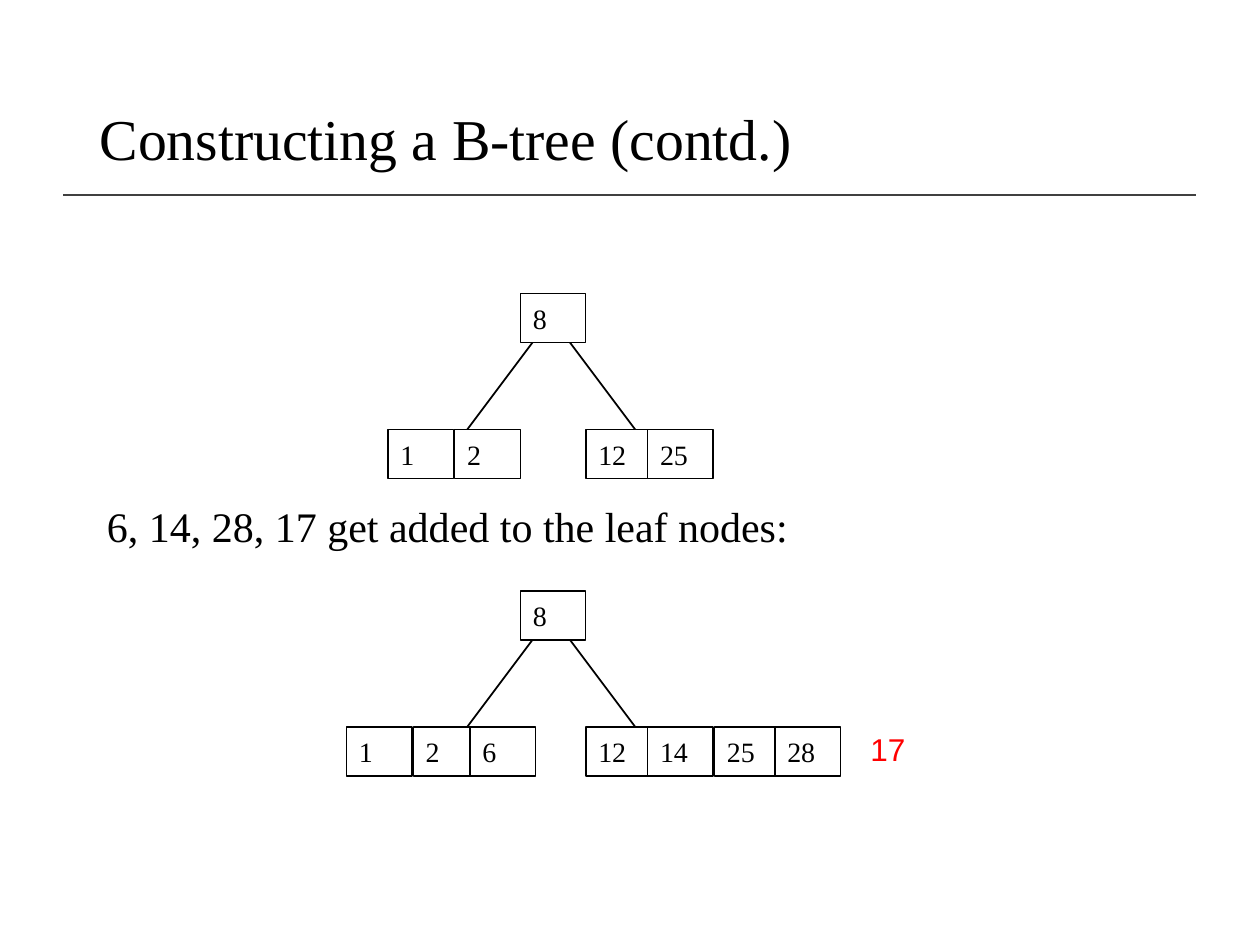
from lxml import etree
from pptx import Presentation
from pptx.dml.color import RGBColor
from pptx.enum.shapes import MSO_CONNECTOR, MSO_SHAPE
from pptx.enum.text import MSO_ANCHOR, PP_ALIGN
from pptx.oxml.ns import qn
from pptx.util import Inches, Pt

RECT, LINE = MSO_SHAPE.RECTANGLE, MSO_CONNECTOR.STRAIGHT
MIDDLE, LEFT = MSO_ANCHOR.MIDDLE, PP_ALIGN.LEFT
SERIF, SANS = "Times New Roman", "Arial"
BLACK, WHITE, GRAY, RED = "000000", "FFFFFF", "404040", "FF0000"

TITLE = "Constructing a B-tree (contd.)"
NOTE = "6, 14, 28, 17 get added to the leaf nodes:"
EXTRA = "17"
# Each tree: top of its root, then its leaf keys with their left edges
TREES = [
    (2.33, [("1", 3.08), ("2", 3.61), ("12", 4.65), ("25", 5.14)]),
    (4.69, [("1", 2.75), ("2", 3.28), ("6", 3.73),
            ("12", 4.65), ("14", 5.14), ("25", 5.67), ("28", 6.15)]),
]
ROOT, ROOT_X = "8", 4.13
CELL_W, CELL_H = 0.52, 0.39
DROP = 1.08                            # root top to leaf top
EDGES = [(4.33, 3.58), (4.42, 5.17)]   # x at root, x at leaf
EDGE_TOP, EDGE_H = 0.25, 1.0


def color(code):
    return RGBColor.from_string(code)


def write(shape, text, size=16, font=SERIF, ink=BLACK, space=None, wrap=True):
    frame = shape.text_frame
    frame.word_wrap = wrap
    frame.vertical_anchor = MIDDLE
    para = frame.paragraphs[0]
    para.alignment = LEFT
    para.line_spacing = space
    run = para.add_run()
    run.text = text
    run.font.size = Pt(size)
    run.font.name = font
    run.font.color.rgb = color(ink)


def place(shape, *box):
    shape.left, shape.top, shape.width, shape.height = map(Inches, box)


def label(slide, text, box, **form):
    write(slide.shapes.add_textbox(*map(Inches, box)), text, **form)


def line(slide, start, end, ink=BLACK):
    link = slide.shapes.add_connector(LINE, *map(Inches, start + end))
    link.line.color.rgb = color(ink)
    link.line.width = Pt(1)
    etree.SubElement(link._element.spPr, qn("a:effectLst"))


def cell(slide, key, x, y):
    box = slide.shapes.add_shape(RECT, *map(Inches, (x, y, CELL_W, CELL_H)))
    box.shadow.inherit = False
    box.fill.solid()
    box.fill.fore_color.rgb = color(WHITE)
    box.line.color.rgb = color(BLACK)
    box.line.width = Pt(0.75)
    write(box, key)


def tree(slide, top, leaves):
    y = top + EDGE_TOP
    for near, far in EDGES:
        line(slide, (near, y), (far, y + EDGE_H))
    cell(slide, ROOT, ROOT_X, top)
    for key, x in leaves:
        cell(slide, key, x, top + DROP)


def main():
    deck = Presentation()
    deck.slide_width, deck.slide_height = Inches(10), Inches(7.5)
    slide = deck.slides.add_slide(deck.slide_layouts[5])
    title = slide.shapes.title
    place(title, 0.69, 0.4, 8.62, 1.45)
    write(title, TITLE, size=33, space=0.9)
    line(slide, (0.5, 1.55), (9.49, 1.55), GRAY)
    for top, leaves in TREES:
        tree(slide, top, leaves)
    label(slide, NOTE, (0.75, 3.92, 8.58, 0.5), size=24)
    label(slide, EXTRA, (6.81, 5.74, 0.48, 0.4), size=18, font=SANS,
          ink=RED, wrap=False)
    deck.save("out.pptx")


if __name__ == "__main__":
    main()
